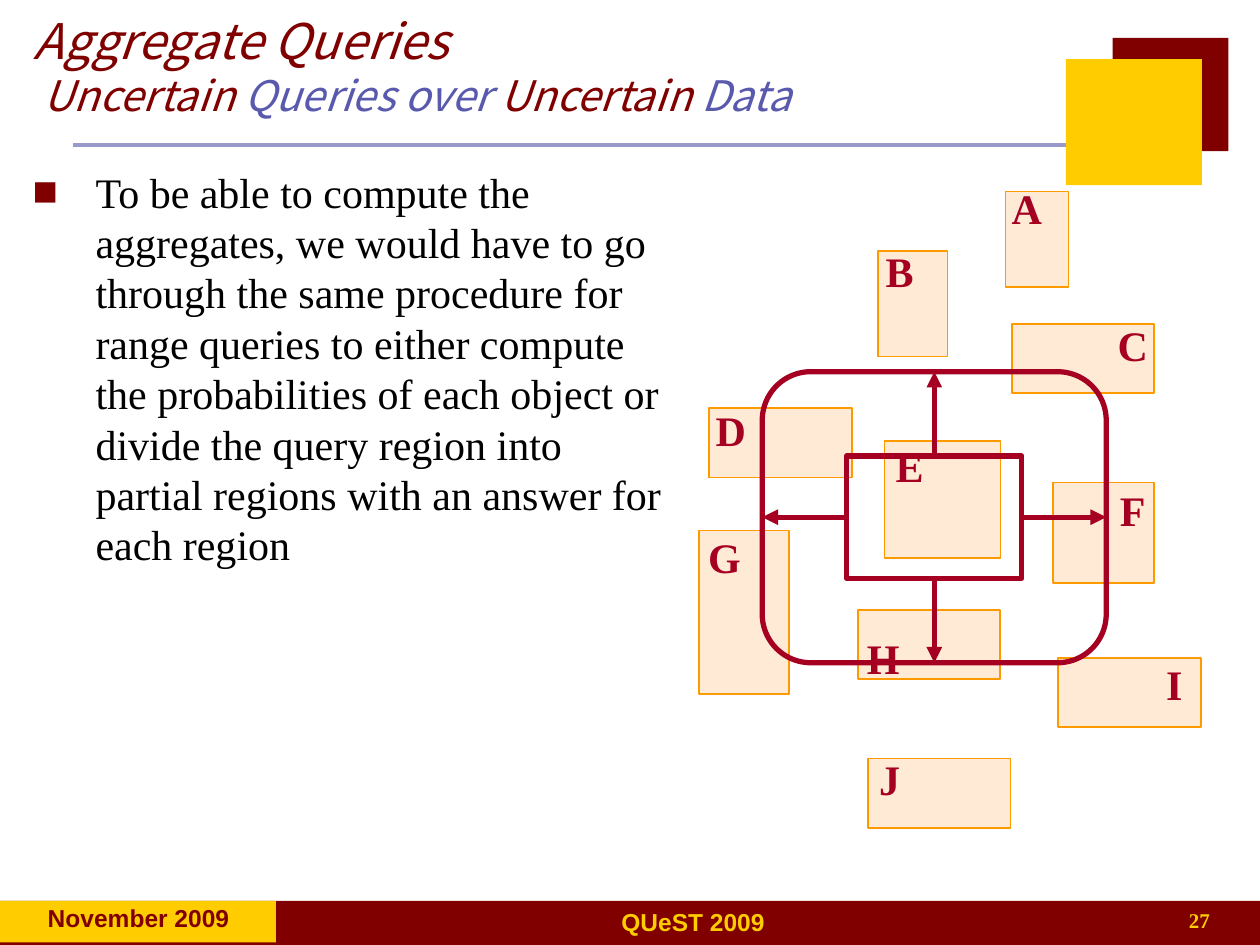
from lxml import etree
from pptx import Presentation
from pptx.dml.color import RGBColor
from pptx.enum.shapes import MSO_CONNECTOR, MSO_SHAPE
from pptx.enum.text import MSO_ANCHOR, PP_ALIGN
from pptx.oxml.ns import qn
from pptx.util import Inches, Pt

MAROON = RGBColor(0x80, 0x00, 0x00)
GOLD = RGBColor(0xFF, 0xCC, 0x00)
LAVENDER = RGBColor(0x99, 0x99, 0xCC)
VIOLET = RGBColor(0x59, 0x59, 0xAD)
PEACH = RGBColor(0xFF, 0xCC, 0x99)
ORANGE = RGBColor(0xFF, 0x99, 0x00)
CRIMSON = RGBColor(0xA5, 0x00, 0x21)
BLACK = RGBColor(0x00, 0x00, 0x00)

RECTANGLE, ROUNDED = MSO_SHAPE.RECTANGLE, MSO_SHAPE.ROUNDED_RECTANGLE
STRAIGHT = MSO_CONNECTOR.STRAIGHT
LEFT, CENTER, RIGHT = PP_ALIGN.LEFT, PP_ALIGN.CENTER, PP_ALIGN.RIGHT
TOP, MIDDLE = MSO_ANCHOR.TOP, MSO_ANCHOR.MIDDLE
SERIF, SANS, TITLE_FONT = "Times New Roman", "Arial", "Noto Sans CJK KR"

deck = Presentation()
deck.slide_width, deck.slide_height = Inches(10), Inches(7.5)
page = deck.slides.add_slide(deck.slide_layouts[6])


def add_box(kind, place, fill=None, line=None, width=1):
    box = page.shapes.add_shape(kind, *[Inches(v) for v in place])
    box.shadow.inherit = False
    if fill is None:
        box.fill.background()
    else:
        box.fill.solid()
        box.fill.fore_color.rgb = fill
    if line is None:
        box.line.fill.background()
    else:
        box.line.color.rgb = line
        box.line.width = Pt(width)
    return box


def add_text(place, lines, font, align=LEFT, anchor=TOP, bold=False, italic=False):
    """Each line is a list of (text, size, colour) runs."""
    frame = page.shapes.add_textbox(*[Inches(v) for v in place]).text_frame
    frame.word_wrap = True
    frame.vertical_anchor = anchor
    para = frame.paragraphs[0]
    para.alignment = align
    for index, runs in enumerate(lines):
        if index:
            para.add_line_break()
        for text, size, color in runs:
            span = para.add_run()
            span.text = text
            span.font.name = font
            span.font.size = Pt(size)
            span.font.bold = bold
            span.font.italic = italic
            span.font.color.rgb = color
    return para


# Header rule, footer bars and corner squares
rule = page.shapes.add_connector(
    STRAIGHT, Inches(0.58), Inches(1.15), Inches(8.5), Inches(1.15))
rule.line.color.rgb = LAVENDER
rule.line.width = Pt(2.25)
etree.SubElement(rule._element.spPr, qn("a:effectLst"))
for place, color in [
    ((0, 7.15, 10, 0.35), MAROON),
    ((0, 7.15, 2.19, 0.33), GOLD),
    ((8.83, 0.3, 0.92, 0.9), MAROON),
    ((8.46, 0.47, 1.08, 1), GOLD),
]:
    add_box(RECTANGLE, place, color)

# Footer text
add_text((1.89, 7.15, 7.22, 0.33), [[("QUeST 2009", 14, GOLD)]], SANS, CENTER, bold=True)
add_text((0.12, 7.12, 1.96, 0.33), [[("November 2009", 14, MAROON)]], SANS, CENTER, bold=True)
add_text((7.62, 7.15, 2.08, 0.33), [[("27", 12, GOLD)]], SERIF, RIGHT, bold=True)

# Title
add_text((0.17, 0.1, 8.66, 0.83), [
    [("Aggregate Queries", 28, MAROON)],
    [(" Uncertain ", 24, MAROON), ("Queries over ", 24, VIOLET),
     ("Uncertain ", 24, MAROON), ("Data", 24, VIOLET)],
], TITLE_FONT, anchor=MIDDLE, italic=True)

# Body bullet
body = add_text((0.16, 1.27, 5.21, 5.9), [[(
    "To be able to compute the aggregates, we would have to go through the same "
    "procedure for range queries to either compute the probabilities of each object "
    "or divide the query region into partial regions with an answer for each region",
    24, BLACK)]], SERIF)
properties = body._p.get_or_add_pPr()
properties.set("marL", str(Inches(0.5)))
properties.set("indent", str(-Inches(0.5)))
bullet_color = etree.SubElement(properties, qn("a:buClr"))
etree.SubElement(bullet_color, qn("a:srgbClr"), val=str(MAROON))
etree.SubElement(properties, qn("a:buFont"), typeface=SANS)
etree.SubElement(properties, qn("a:buChar"), char="■")

# Uncertain objects: region, then left and top of the label
objects = {
    "A": ((7.98, 1.52, 0.5, 0.76), (7.9, 1.4)),
    "B": ((6.97, 1.99, 0.55, 0.84), (6.89, 1.9)),
    "C": ((8.03, 2.57, 1.13, 0.55), (8.74, 2.49)),
    "D": ((5.63, 3.24, 1.13, 0.55), (5.55, 3.16)),
    "E": ((7.02, 3.5, 0.92, 0.93), (6.97, 3.45)),
    "F": ((8.36, 3.83, 0.8, 0.8), (8.74, 3.8)),
    "G": ((5.55, 4.21, 0.71, 1.3), (5.5, 4.17)),
    "H": ((6.81, 4.84, 1.13, 0.55), (6.76, 4.97)),
    "I": ((8.4, 5.22, 1.13, 0.55), (9.07, 5.18)),
    "J": ((6.89, 6.02, 1.13, 0.55), (6.81, 5.93)),
}
for name, (region, corner) in objects.items():
    box = add_box(RECTANGLE, region, PEACH, ORANGE)
    tint = box._element.spPr.find(qn("a:solidFill"))[0]
    etree.SubElement(tint, qn("a:alpha"), val="40000")
    add_text((*corner, 0.5, 0.5), [[(name, 24, CRIMSON)]], SERIF, CENTER, bold=True)

# Query rectangle, its expanded range, and the arrows between their sides
query = add_box(RECTANGLE, (6.72, 3.62, 1.39, 0.97), line=CRIMSON, width=3)
expanded = add_box(ROUNDED, (6.05, 2.95, 2.73, 2.31), line=CRIMSON, width=3)
expanded.adjustments[0] = 0.167
for side in range(4):
    arrow = page.shapes.add_connector(STRAIGHT, 0, 0, 0, 0)
    arrow.begin_connect(query, side)
    arrow.end_connect(expanded, side)
    arrow.line.color.rgb = CRIMSON
    arrow.line.width = Pt(3)
    etree.SubElement(arrow.line._get_or_add_ln(), qn("a:tailEnd"), type="triangle")
    etree.SubElement(arrow._element.spPr, qn("a:effectLst"))

deck.save("out.pptx")
